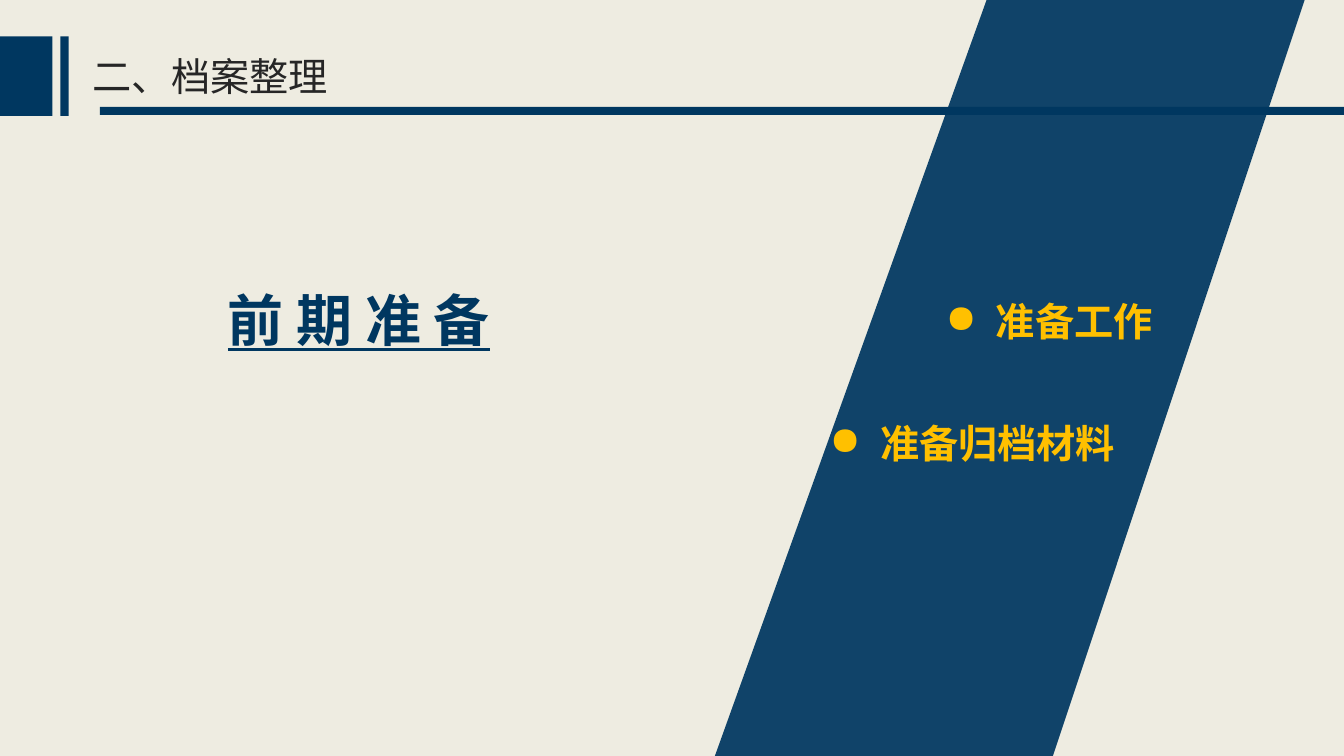
from lxml.etree import SubElement
from pptx import Presentation
from pptx.dml.color import RGBColor
from pptx.enum.shapes import MSO_SHAPE
from pptx.enum.text import MSO_ANCHOR, MSO_AUTO_SIZE, PP_ALIGN
from pptx.oxml.ns import qn
from pptx.util import Inches, Pt

TITLE = "二、档案整理"
TOPIC = "前 期 准 备"
STEPS = [("准备工作", 9.28, 2.67), ("准备归档材料", 8.13, 3.88)]  # text, left, top
STEP_SIZE = (3.33, 0.81)

COLORS = {"paper": "EEECE1", "navy": "003760", "ink": "262626", "gold": "FFC000"}
CJK_FONT = "Noto Sans CJK SC"
BAND = [(7.08, 7.53), (9.8, -0.04), (12.95, -0.03), (10.43, 7.54)]
BAND_OPACITY = 93
HEADER_BARS = [  # left, top, width, height
    (0, 0.36, 0.52, 0.79),
    (0.6, 0.36, 0.08, 0.79),
    (0.99, 1.06, 12.34, 0.08),
]


def color(name):
    return RGBColor.from_string(COLORS[name])


def paint(shape, name):
    shape.fill.solid()
    shape.fill.fore_color.rgb = color(name)
    shape.line.fill.background()
    shape.shadow.inherit = False


def write(frame, text, typeface, size, color_name, bold=False):
    """Fill the first paragraph, with one typeface for Latin and East Asian text."""
    frame.word_wrap = True
    paragraph = frame.paragraphs[0]
    paragraph.text = text
    font = paragraph.font
    font.name, font.size, font.bold = typeface, Pt(size), bold
    font.color.rgb = color(color_name)
    run_font = paragraph.runs[0].font
    run_font.name = typeface
    SubElement(paragraph.runs[0]._r.rPr, qn("a:ea"), typeface=typeface)
    return paragraph


def add_band(slide):
    corners = [(Inches(x), Inches(y)) for x, y in BAND]
    builder = slide.shapes.build_freeform(*corners[0])
    builder.add_line_segments(corners[1:], close=True)
    band = builder.convert_to_shape()
    paint(band, "navy")
    fill_color = band._element.spPr.find(qn("a:solidFill"))[0]
    SubElement(fill_color, qn("a:alpha"), val=str(BAND_OPACITY * 1000))


def add_header(slide):
    for bar in HEADER_BARS:
        shape = slide.shapes.add_shape(MSO_SHAPE.RECTANGLE, *map(Inches, bar))
        paint(shape, "navy")
    title = slide.shapes.title
    title.left, title.top = Inches(0.82), Inches(0.47)
    title.width, title.height = Inches(11.16), Inches(0.57)
    frame = title.text_frame
    frame.auto_size = MSO_AUTO_SIZE.NONE
    frame.vertical_anchor = MSO_ANCHOR.TOP
    write(frame, TITLE, "Arial", 28, "ink").alignment = PP_ALIGN.LEFT


def add_topic(slide):
    box = slide.shapes.add_textbox(*map(Inches, (1.11, 2.79, 4.9, 0.61)))
    frame = box.text_frame
    frame.margin_left = frame.margin_right = 0
    frame.margin_top = frame.margin_bottom = 0
    frame.vertical_anchor = MSO_ANCHOR.MIDDLE
    topic = write(frame, TOPIC, CJK_FONT, 40, "navy", bold=True)
    topic.font.underline = True
    topic.runs[0].font.underline = True
    topic.alignment = PP_ALIGN.CENTER
    topic.line_spacing = 1.2


def add_steps(slide):
    for text, left, top in STEPS:
        box = slide.shapes.add_textbox(*map(Inches, (left, top, *STEP_SIZE)))
        step = write(box.text_frame, text, CJK_FONT, 28, "gold", bold=True)
        step.line_spacing = 1.5
        properties = step._p.get_or_add_pPr()
        properties.set("marL", str(Inches(0.5)))
        properties.set("indent", str(Inches(-0.5)))
        bullet = SubElement(properties, qn("a:buChar"), char="●")
        properties.find(qn("a:defRPr")).addprevious(bullet)


def main():
    deck = Presentation()
    deck.slide_width, deck.slide_height = Inches(13.33), Inches(7.5)
    slide = deck.slides.add_slide(deck.slide_layouts[5])
    slide.background.fill.solid()
    slide.background.fill.fore_color.rgb = color("paper")
    add_band(slide)
    add_topic(slide)
    add_header(slide)
    add_steps(slide)
    deck.save("out.pptx")


if __name__ == "__main__":
    main()
